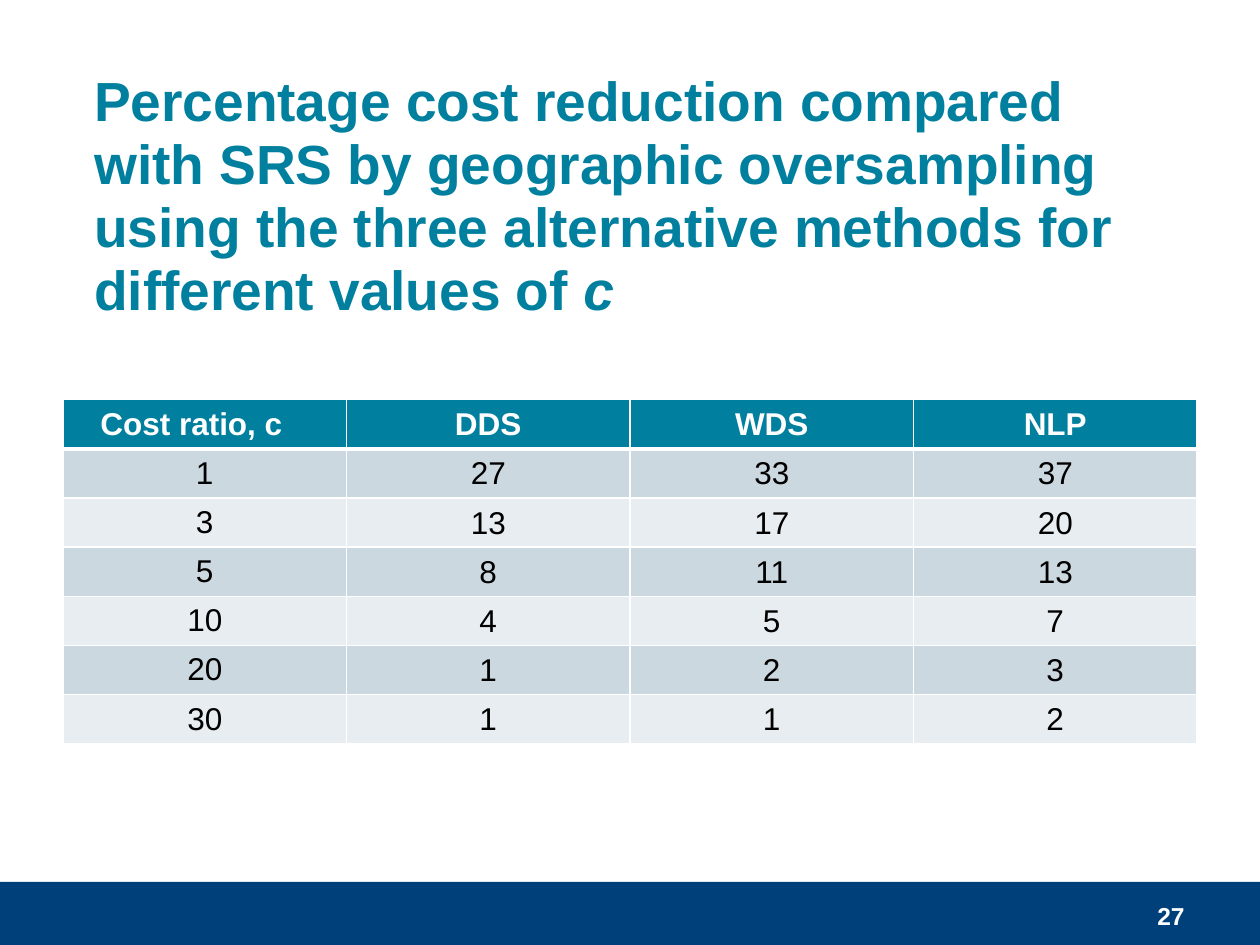
from dataclasses import dataclass

from lxml import etree
from pptx import Presentation
from pptx.dml.color import RGBColor
from pptx.enum.shapes import MSO_SHAPE
from pptx.enum.text import MSO_ANCHOR, PP_ALIGN
from pptx.oxml.ns import qn
from pptx.util import Pt

RECT = MSO_SHAPE.RECTANGLE
MIDDLE = MSO_ANCHOR.MIDDLE
CENTER, RIGHT = PP_ALIGN.CENTER, PP_ALIGN.RIGHT


@dataclass(frozen=True)
class Theme:
    font: str = "Arial"
    teal: str = "00809E"
    navy: str = "00407A"
    white: str = "FFFFFF"
    black: str = "000000"
    bands: tuple = ("CCD8DF", "E7EDF0")
    title: float = 31.5
    body: float = 18
    number: float = 14


T = Theme()


def style(p, size, color, bold):
    f = p.font
    f.name, f.size, f.bold = T.font, Pt(size), bold
    f.color.rgb = RGBColor.from_string(color)


def border(cell, side, width):
    ln = etree.SubElement(cell._tc.get_or_add_tcPr(), qn(f"a:ln{side}"), w=str(Pt(width)))
    fill = etree.SubElement(ln, qn("a:solidFill"))
    etree.SubElement(fill, qn("a:srgbClr"), val=T.white)


prs = Presentation()
prs.slide_width, prs.slide_height = Pt(720), Pt(540)
s = prs.slides.add_slide(prs.slide_layouts[6])

bar = s.shapes.add_shape(RECT, Pt(0), Pt(504), Pt(720), Pt(36))
bar.shadow.inherit = False
bar.fill.solid()
bar.fill.fore_color.rgb = RGBColor.from_string(T.navy)
bar.line.color.rgb = RGBColor.from_string(T.navy)
bar.line.width = Pt(0.5)

title = s.shapes.add_textbox(Pt(28.8), Pt(53.3), Pt(655.2), Pt(117.4))
tf = title.text_frame
tf.word_wrap = True
tf.vertical_anchor = MIDDLE
p = tf.paragraphs[0]
p._p.get_or_add_pPr().set("marL", str(Pt(18)))
p.line_spacing = Pt(36)
style(p, T.title, T.teal, True)
r = p.add_run()
r.text = ("Percentage cost reduction compared with SRS by geographic oversampling "
          "using the three alternative methods for different values of ")
r = p.add_run()
r.text = "c"
r.font.italic = True

rows = [
    ("Cost ratio, c", "DDS", "WDS", "NLP"),
    (1, 27, 33, 37),
    (3, 13, 17, 20),
    (5, 8, 11, 13),
    (10, 4, 5, 7),
    (20, 1, 2, 3),
    (30, 1, 1, 2),
]
row_height = 28.1
table = s.shapes.add_table(len(rows), len(rows[0]), Pt(36), Pt(228.4),
                           Pt(648), Pt(row_height * len(rows))).table
for col in table.columns:
    col.width = Pt(162)
for i, values in enumerate(rows):
    table.rows[i].height = Pt(row_height)
    header = i == 0
    for j, value in enumerate(values):
        cell = table.cell(i, j)
        cell.vertical_anchor = MIDDLE
        inset = 5 if header != (j == 0) else 0.7
        cell.margin_left = Pt(inset)
        cell.margin_right = Pt(16 if header and j == 0 else inset)
        cell.margin_top = Pt(0.7 if inset < 1 else 0)
        cell.margin_bottom = Pt(0)
        for side in "LRTB":
            heavy = (i, side) in ((0, "B"), (1, "T"))
            border(cell, side, 3 if heavy else 1)
        cell.fill.solid()
        cell.fill.fore_color.rgb = RGBColor.from_string(T.teal if header else T.bands[(i - 1) % 2])
        p = cell.text_frame.paragraphs[0]
        p.text = str(value)
        p.alignment = CENTER
        style(p, T.body, T.white if header else T.black, header)

number = s.shapes.add_textbox(Pt(516), Pt(509), Pt(168), Pt(28.8))
tf = number.text_frame
tf.word_wrap = True
tf.vertical_anchor = MIDDLE
p = tf.paragraphs[0]
p.text = "27"
p.alignment = RIGHT
style(p, T.number, T.white, True)

prs.save("out.pptx")
